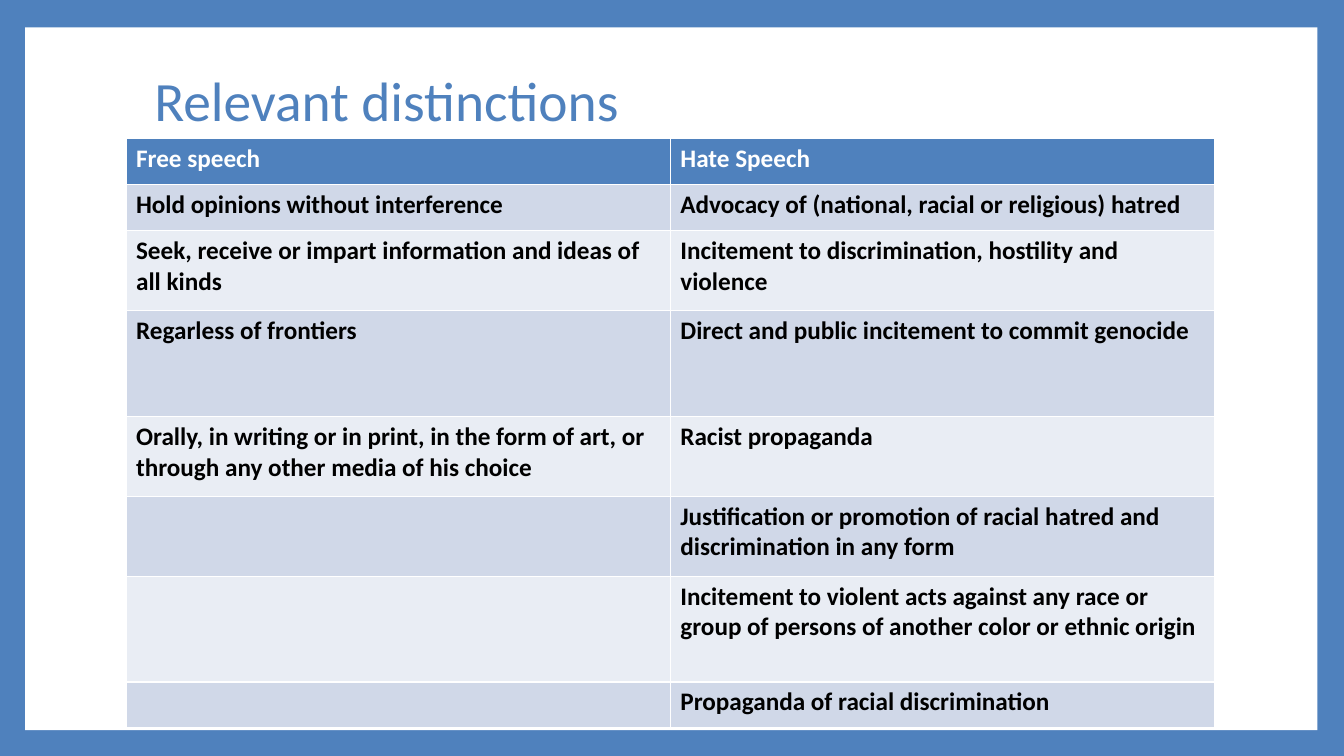
"""Build the slide that sets free speech against hate speech."""
from pptx import Presentation
from pptx.dml.color import RGBColor
from pptx.enum.shapes import MSO_SHAPE
from pptx.enum.text import MSO_ANCHOR, PP_ALIGN
from pptx.util import Pt

RECT = MSO_SHAPE.RECTANGLE
MIDDLE = MSO_ANCHOR.MIDDLE
LEFT = PP_ALIGN.LEFT

TITLE = "Relevant distinctions"
ROWS = [
    ("Free speech", "Hate Speech"),
    ("Hold opinions without interference",
     "Advocacy of (national, racial or religious) hatred"),
    ("Seek, receive or impart information and ideas of all kinds",
     "Incitement to discrimination, hostility and violence"),
    ("Regarless of frontiers",
     "Direct and public incitement to commit genocide"),
    ("Orally, in writing or in print, in the form of art, or through any other media of his choice",
     "Racist propaganda"),
    ("", "Justification or promotion of racial hatred and discrimination in any form"),
    ("", "Incitement to violent acts against any race or group of persons of another color or ethnic origin"),
    ("", "Propaganda of racial discrimination"),
]
LOW, MID, TALL = 32.9, 57.1, 75.6
HEIGHTS = [LOW, LOW, MID, TALL, MID, MID, TALL, LOW]
COLORS = {"blue": "4F81BD", "white": "FFFFFF", "black": "000000",
          "dark": "D0D8E8", "light": "E9EDF4"}
PANEL = (18, 19.5, 923, 502)
HEAD = (103, 48.2, 764.6, 51.1)
GRID = (90, 98.9, 777.6, sum(HEIGHTS))


def rgb(name):
    return RGBColor.from_string(COLORS[name])


def paint(fill, name):
    fill.solid()
    fill.fore_color.rgb = rgb(name)


def style(font, color, **form):
    for key, value in form.items():
        setattr(font, key, value)
    font.color.rgb = rgb(color)


def add_panel(slide):
    panel = slide.shapes.add_shape(RECT, *map(Pt, PANEL))
    panel.shadow.inherit = False
    paint(panel.fill, "white")
    panel.line.fill.background()
    slide.shapes._spTree.insert(2, panel._element)


def add_title(slide):
    title = slide.shapes.title
    title.left, title.top, title.width, title.height = map(Pt, HEAD)
    frame = title.text_frame
    frame.text = TITLE
    frame.vertical_anchor = MIDDLE
    para = frame.paragraphs[0]
    para.alignment = LEFT
    para.line_spacing = 0.9
    style(para.runs[0].font, "blue", name="Calibri", size=Pt(39.6))


def add_grid(slide):
    table = slide.shapes.add_table(len(ROWS), 2, *map(Pt, GRID)).table
    for y, (texts, height) in enumerate(zip(ROWS, HEIGHTS)):
        table.rows[y].height = Pt(height)
        back = "blue" if y == 0 else "dark" if y % 2 else "light"
        ink = "black" if y else "white"
        for x, text in enumerate(texts):
            cell = table.cell(y, x)
            paint(cell.fill, back)
            if text:
                cell.text = text
                style(cell.text_frame.paragraphs[0].runs[0].font, ink,
                      name="Calibri", size=Pt(18), bold=True)


def main():
    deck = Presentation()
    deck.slide_width, deck.slide_height = Pt(960), Pt(540)
    slide = deck.slides.add_slide(deck.slide_layouts[5])
    paint(slide.background.fill, "blue")
    add_panel(slide)
    add_title(slide)
    add_grid(slide)
    deck.save("out.pptx")


if __name__ == "__main__":
    main()
